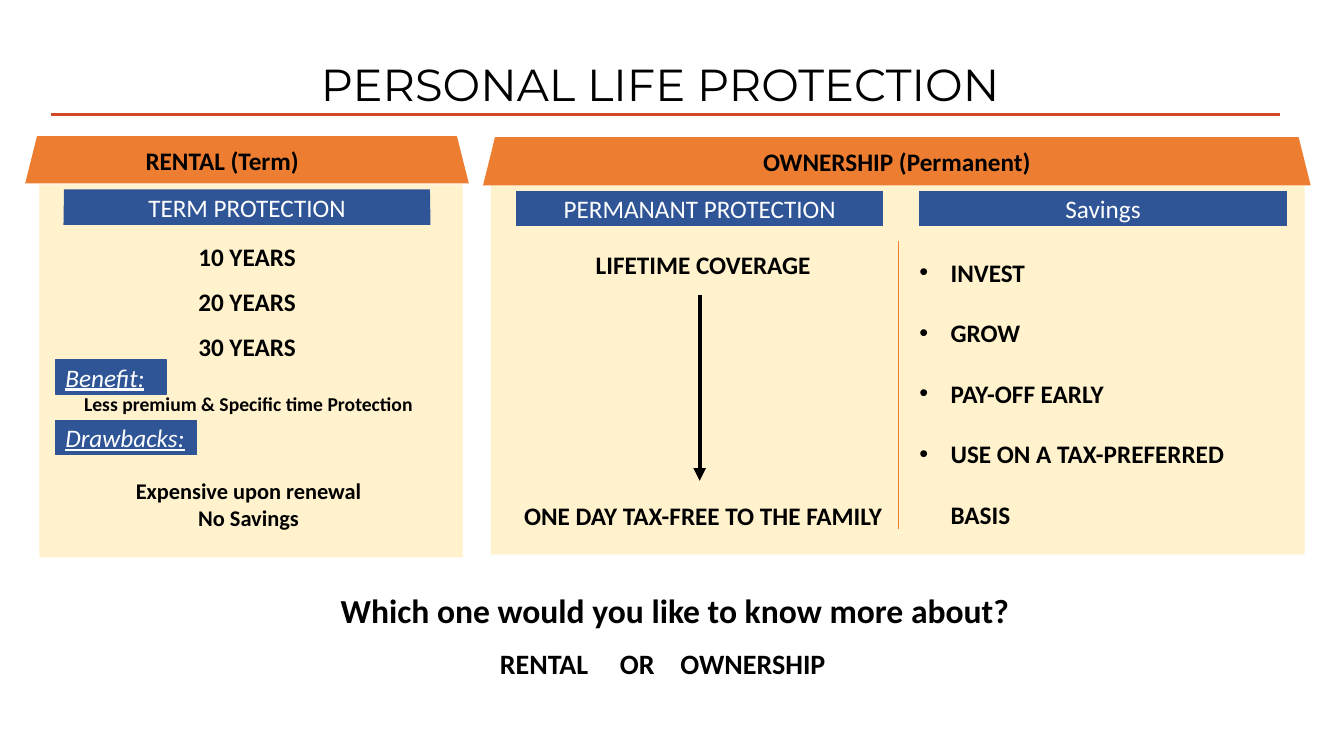
from dataclasses import dataclass
from typing import NamedTuple, Optional

from lxml.etree import SubElement
from pptx import Presentation
from pptx.dml.color import RGBColor
from pptx.enum.shapes import MSO_CONNECTOR, MSO_SHAPE
from pptx.enum.text import MSO_ANCHOR, PP_ALIGN
from pptx.oxml.ns import qn
from pptx.util import Emu, Pt

EMU_PER_PX = 9144  # 100 px to the inch
INSET = 10
BLACK, WHITE = "000000", "FFFFFF"
CREAM, ORANGE, BLUE, RED = "FFF2CC", "ED7D31", "2F5597", "D24726"
LEFT, CENTER = PP_ALIGN.LEFT, PP_ALIGN.CENTER
RECT, TRAPEZOID = MSO_SHAPE.RECTANGLE, MSO_SHAPE.TRAPEZOID


class Box(NamedTuple):
    left: int
    top: int
    width: int
    height: int


class Line(NamedTuple):
    text: str
    size: int = 18
    before: int = 0


@dataclass(frozen=True)
class TextStyle:
    font: str = "Calibri"
    color: str = BLACK
    bold: bool = True
    emphasis: bool = False  # italic and underlined
    align: PP_ALIGN = CENTER
    spacing: float = 1.0
    bullet_indent: int = 0
    tabs: tuple[int, ...] = ()


@dataclass(frozen=True)
class Plate:
    box: Box
    fill: str
    text: str = ""
    style: TextStyle = TextStyle()
    geometry: MSO_SHAPE = RECT
    taper: float = 0.25
    outline: Optional[str] = None
    right_inset: int = INSET


@dataclass(frozen=True)
class Passage:
    box: Box
    lines: tuple[Line, ...]
    style: TextStyle = TextStyle()


@dataclass(frozen=True)
class Rule:
    start: tuple[int, int]
    end: tuple[int, int]
    color: str
    weight: float
    arrow: bool = False


def px(length: int) -> Emu:
    return Emu(length * EMU_PER_PX)


def rgb(color: str) -> RGBColor:
    return RGBColor.from_string(color)


def write(frame, lines: tuple[Line, ...], style: TextStyle) -> None:
    frame.word_wrap = True
    for number, line in enumerate(lines):
        paragraph = frame.add_paragraph() if number else frame.paragraphs[0]
        paragraph.alignment = style.align
        paragraph.line_spacing = style.spacing
        if line.before:
            paragraph.space_before = Pt(line.before)
        properties = paragraph._p.get_or_add_pPr()
        if style.bullet_indent:
            indent = px(style.bullet_indent)
            properties.set("marL", str(indent))
            properties.set("indent", str(-indent))
            SubElement(properties, qn("a:buFont"), typeface="Arial")
            SubElement(properties, qn("a:buChar"), char="•")
        if style.tabs:
            stops = SubElement(properties, qn("a:tabLst"))
            for stop in style.tabs:
                SubElement(stops, qn("a:tab"), pos=str(px(stop)), algn="l")
        run = paragraph.add_run()
        run.text = line.text
        font = run.font
        font.name, font.size, font.bold = style.font, Pt(line.size), style.bold
        font.italic = font.underline = style.emphasis
        font.color.rgb = rgb(style.color)


def draw_plate(shapes, plate: Plate) -> None:
    shape = shapes.add_shape(plate.geometry, *map(px, plate.box))
    shape.shadow.inherit = False
    shape.fill.solid()
    shape.fill.fore_color.rgb = rgb(plate.fill)
    if plate.geometry == TRAPEZOID:
        shape.adjustments[0] = plate.taper
    if plate.outline:
        shape.line.color.rgb = rgb(plate.outline)
        shape.line.width = Pt(1)
    else:
        shape.line.fill.background()
    if plate.text:
        frame = shape.text_frame
        frame.vertical_anchor = MSO_ANCHOR.MIDDLE
        frame.margin_right = px(plate.right_inset)
        write(frame, (Line(plate.text),), plate.style)


def draw_passage(shapes, passage: Passage) -> None:
    write(shapes.add_textbox(*map(px, passage.box)).text_frame, passage.lines, passage.style)


def draw_rule(shapes, rule: Rule) -> None:
    connector = shapes.add_connector(
        MSO_CONNECTOR.STRAIGHT, *map(px, rule.start + rule.end))
    connector.line.color.rgb = rgb(rule.color)
    connector.line.width = Pt(rule.weight)
    if rule.arrow:
        SubElement(connector.line._ln, qn("a:tailEnd"), type="triangle")
    SubElement(connector._element.spPr, qn("a:effectLst"))


HEADING = TextStyle(color=WHITE, bold=False)
TAG = TextStyle(color=WHITE, bold=False, emphasis=True, align=LEFT)
TERMS = TextStyle(spacing=1.5)

PANELS = (
    Plate(Box(39, 183, 420, 370), CREAM),
    Plate(Box(25, 135, 440, 47), ORANGE, "RENTAL (Term)", geometry=TRAPEZOID, right_inset=59),
    Plate(Box(63, 188, 364, 35), BLUE, "TERM PROTECTION", HEADING, TRAPEZOID, 0.015),
    Plate(Box(487, 184, 807, 366), CREAM),
    Plate(Box(479, 136, 821, 48), ORANGE, "OWNERSHIP (Permanent)", geometry=TRAPEZOID),
    Plate(Box(912, 189, 364, 35), BLUE, "Savings", HEADING, TRAPEZOID, 0),
    Plate(Box(512, 189, 364, 35), BLUE, "PERMANANT PROTECTION", HEADING, TRAPEZOID, 0),
)
RULES = (
    Rule((891, 239), (891, 525), ORANGE, 0.5),
    Rule((51, 114), (1270, 114), RED, 2.25),
    Rule((694, 293), (694, 477), BLACK, 3, arrow=True),
)
PASSAGES = (
    Passage(Box(40, 51, 1230, 64), (Line("PERSONAL LIFE PROTECTION", 32),),
            TextStyle(font="Montserrat", bold=False)),
    Passage(Box(50, 219, 390, 142),
            tuple(Line(f"{years} YEARS") for years in (10, 20, 30)), TERMS),
    Passage(Box(506, 227, 383, 303),
            (Line("LIFETIME COVERAGE"),
             Line("ONE DAY TAX-FREE TO THE FAMILY", before=147)), TERMS),
    Passage(Box(902, 220, 344, 305),
            tuple(map(Line, ("INVEST", "GROW", "PAY-OFF EARLY", "USE ON A TAX-PREFERRED BASIS"))),
            TextStyle(align=LEFT, spacing=2.0, bullet_indent=31)),
    Passage(Box(328, 580, 689, 50),
            (Line("Which one would you like to know more about?", 24),), TextStyle(align=LEFT)),
    Passage(Box(486, 636, 360, 44), (Line("RENTAL\tOR\tOWNERSHIP", 20),),
            TextStyle(align=LEFT, tabs=(119, 179))),
    Passage(Box(52, 384, 389, 147),
            (Line("Less premium & Specific time Protection", 14),
             Line("Expensive upon renewal", 16, before=44),
             Line("No Savings", 16))),
)
TAGS = (
    Plate(Box(55, 357, 110, 34), BLUE, "Benefit:", TAG, outline=BLUE),
    Plate(Box(55, 417, 140, 34), BLUE, "Drawbacks:", TAG, outline=BLUE),
)


def main() -> None:
    deck = Presentation()
    deck.slide_width, deck.slide_height = px(1333), px(750)
    shapes = deck.slides.add_slide(deck.slide_layouts[6]).shapes
    for panel in PANELS:
        draw_plate(shapes, panel)
    for rule in RULES:
        draw_rule(shapes, rule)
    for passage in PASSAGES:
        draw_passage(shapes, passage)
    for tag in TAGS:
        draw_plate(shapes, tag)
    deck.save("out.pptx")


if __name__ == "__main__":
    main()
